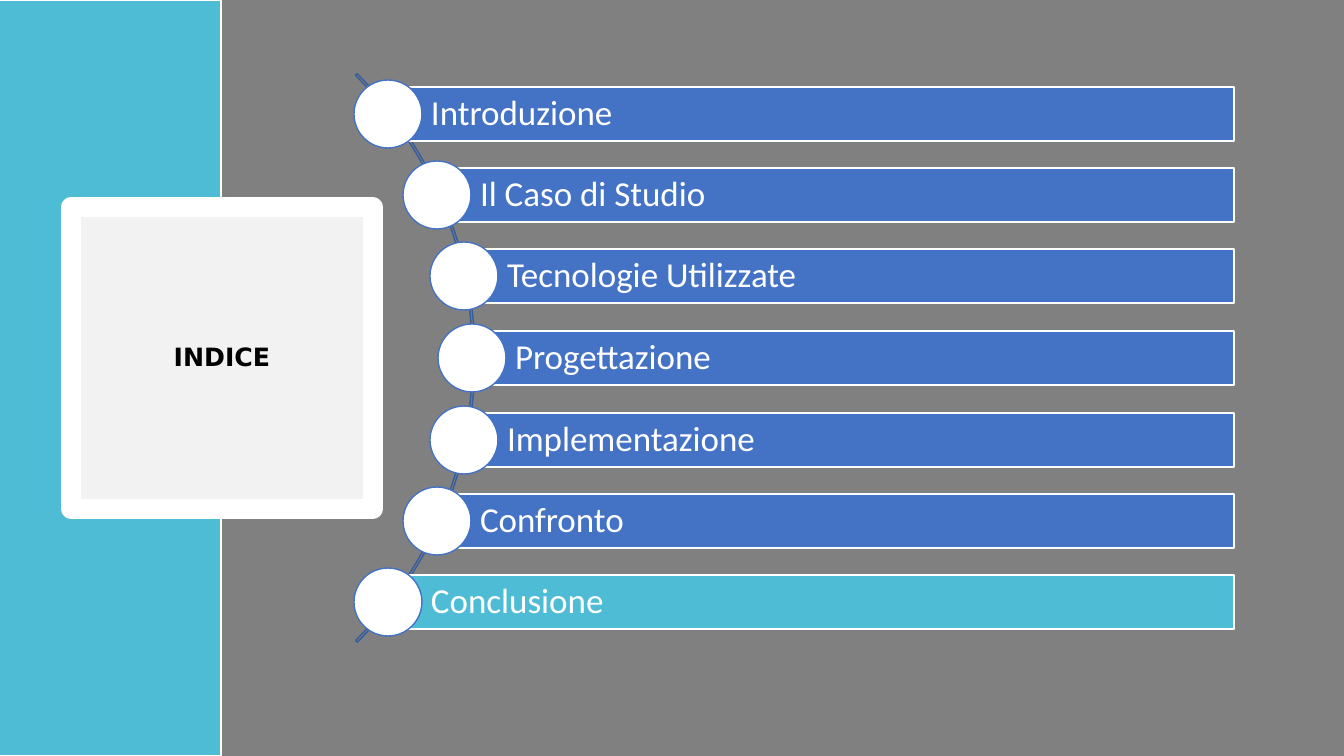
import math

from lxml import etree
from pptx import Presentation
from pptx import util as u
from pptx.dml.color import RGBColor
from pptx.enum import shapes, text
from pptx.oxml import ns

WHITE = RGBColor(0xFF, 0xFF, 0xFF)
BLACK = RGBColor(0x00, 0x00, 0x00)
GREY = RGBColor(0x80, 0x80, 0x80)
PALE = RGBColor(0xF2, 0xF2, 0xF2)
TEAL = RGBColor(0x4F, 0xBC, 0xD6)
BLUE = RGBColor(0x44, 0x72, 0xC4)
DARK_BLUE = RGBColor(0x36, 0x5B, 0x9D)

ENTRIES = ["Introduzione", "Il Caso di Studio", "Tecnologie Utilizzate", "Progettazione",
           "Implementazione", "Confronto", "Conclusione"]


def px(length):
    return u.Emu(round(length * 914400 / 100.8))


def add_box(kind, left, top, width, height, fill, line, line_width=1):
    box = slide.shapes.add_shape(kind, px(left), px(top), px(width), px(height))
    box.shadow.inherit = False
    if fill is None:
        box.fill.background()
    else:
        box.fill.solid()
        box.fill.fore_color.rgb = fill
    box.line.color.rgb = line
    box.line.width = u.Pt(line_width)
    return box


deck = Presentation()
deck.slide_width, deck.slide_height = px(1344), px(756)
slide = deck.slides.add_slide(deck.slide_layouts[6])
slide.background.fill.solid()
slide.background.fill.fore_color.rgb = GREY
shape_kind = shapes.MSO_SHAPE

# Side band
add_box(shape_kind.RECTANGLE, -1, 0, 222, 756, TEAL, WHITE)

# Title card with rounded border corners
card = add_box(shape_kind.RECTANGLE, 71, 207, 302, 302, PALE, WHITE, 13.75)
etree.SubElement(card.line._get_or_add_ln(), ns.qn("a:round"))
card.text_frame.text = "INDICE"
card.text_frame.vertical_anchor = text.MSO_ANCHOR.MIDDLE
para = card.text_frame.paragraphs[0]
para.alignment = text.PP_ALIGN.CENTER
para.line_spacing = 0.9
font = para.runs[0].font
font.name, font.size, font.bold = "DejaVu Sans", u.Pt(18), True
font.color.rgb = BLACK

# Arc behind the entries
ARC_X, ARC_Y, ARC_RADIUS = 73, 358, 402
arc = add_box(shape_kind.BLOCK_ARC, ARC_X - ARC_RADIUS, ARC_Y - ARC_RADIUS,
              2 * ARC_RADIUS, 2 * ARC_RADIUS, None, DARK_BLUE)
for index, value in enumerate((189, 27, 0.003)):
    arc.adjustments[index] = value

# Entries: a bar and a dot, with the dots centred along the arc
PITCH, BAR_HEIGHT, BAR_RIGHT, DOT, DOT_RADIUS = 81.5, 54, 1234, 68, 399
for index, entry in enumerate(ENTRIES):
    offset = (index - 3) * PITCH
    middle_x = round(ARC_X + math.sqrt(DOT_RADIUS ** 2 - offset ** 2))
    middle_y = round(ARC_Y + offset)
    color = TEAL if entry == ENTRIES[-1] else BLUE

    bar = add_box(shape_kind.RECTANGLE, middle_x, middle_y - BAR_HEIGHT // 2,
                  BAR_RIGHT - middle_x, BAR_HEIGHT, color, WHITE)
    frame = bar.text_frame
    frame.text = entry
    frame.vertical_anchor = text.MSO_ANCHOR.MIDDLE
    frame.margin_left = px(43)
    frame.margin_top = frame.margin_right = frame.margin_bottom = px(7)
    para = frame.paragraphs[0]
    para.alignment = text.PP_ALIGN.LEFT
    para.line_spacing = 0.9
    font = para.runs[0].font
    font.name, font.size = "Calibri", u.Pt(25)
    font.color.rgb = WHITE

    add_box(shape_kind.OVAL, middle_x - DOT // 2, middle_y - DOT // 2, DOT, DOT, WHITE, BLUE)

deck.save("out.pptx")
